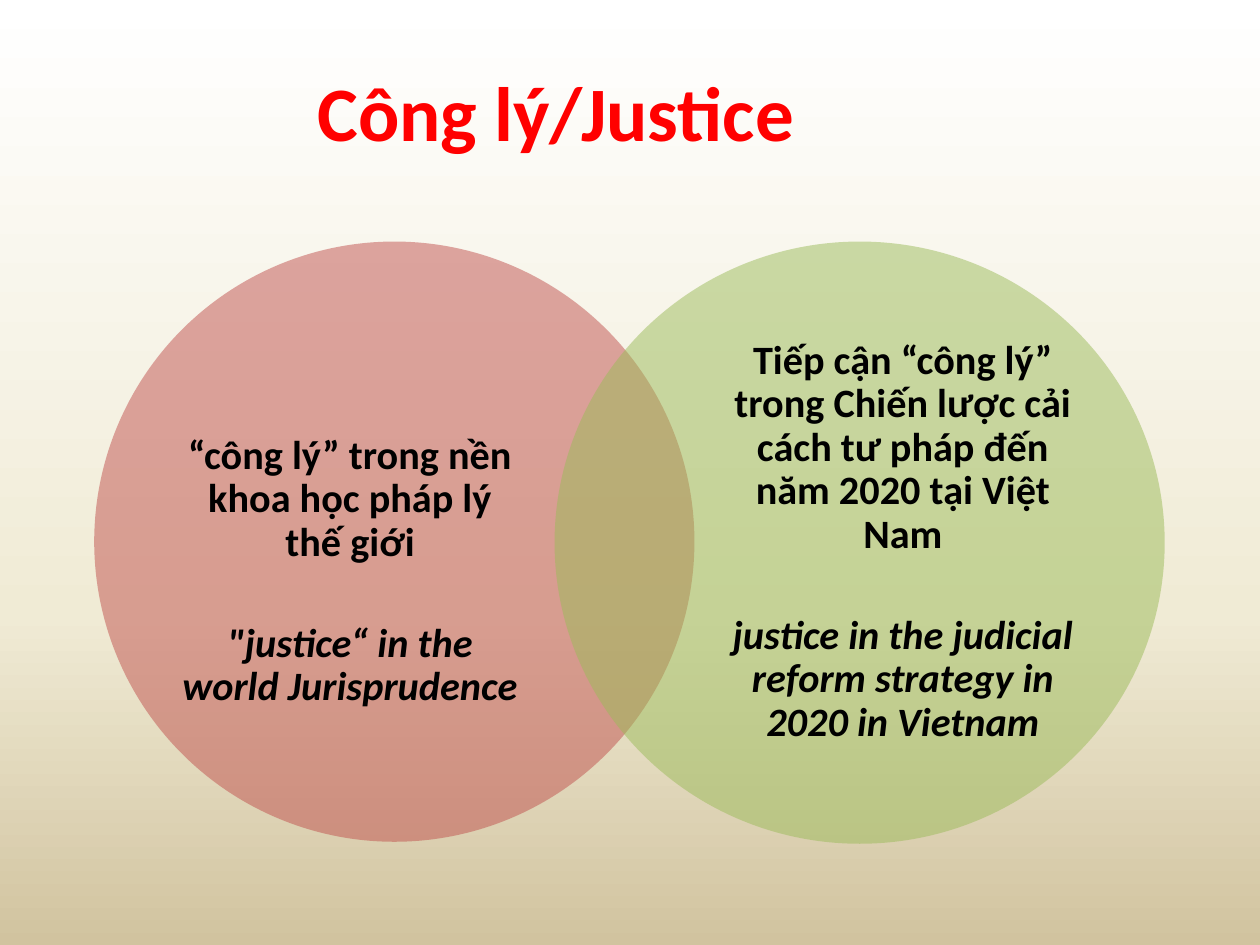
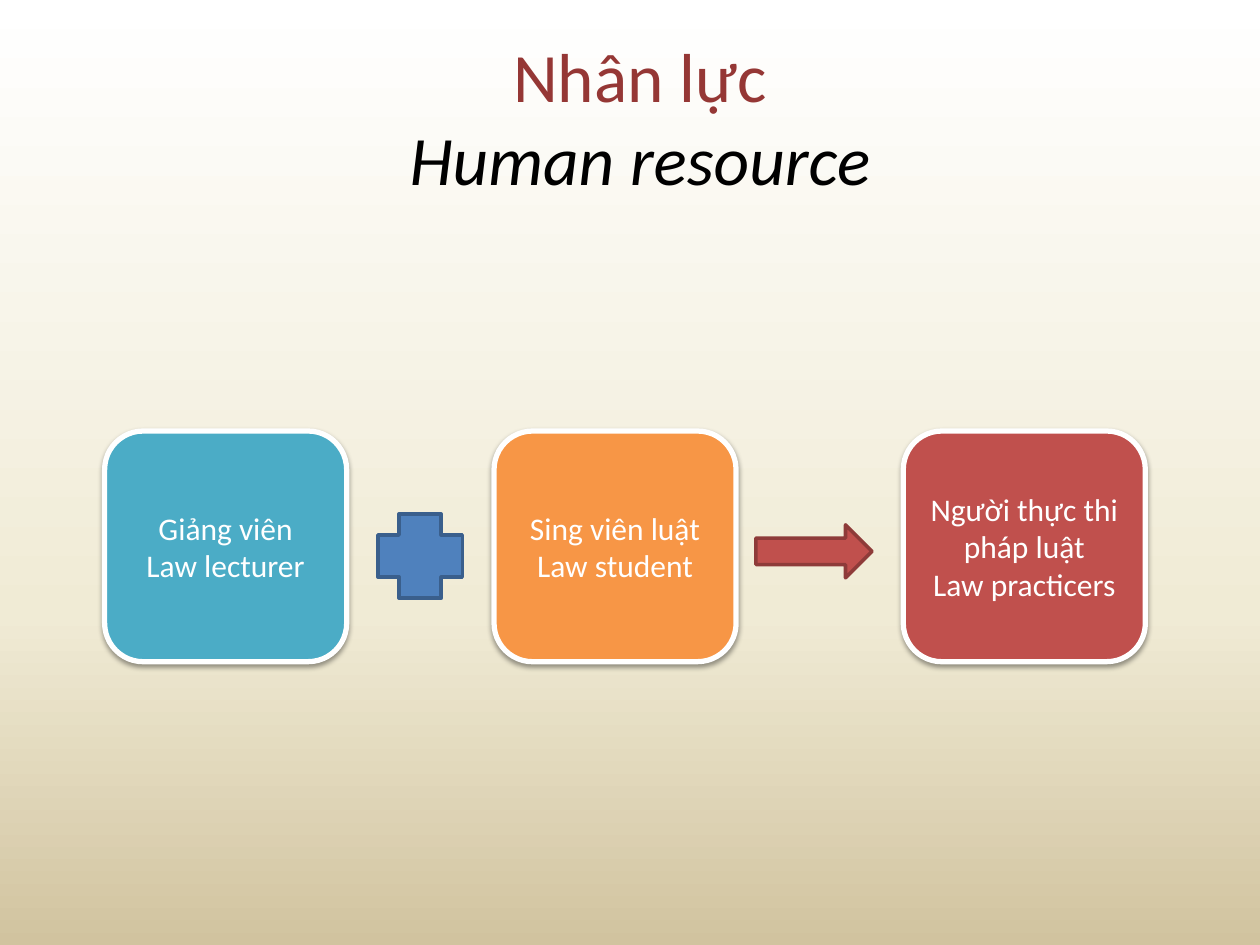
from dataclasses import dataclass

from lxml import etree
from pptx import Presentation
from pptx.dml.color import RGBColor
from pptx.enum.shapes import MSO_SHAPE
from pptx.enum.text import MSO_ANCHOR, PP_ALIGN
from pptx.oxml.ns import qn
from pptx.util import Cm, Pt

OVAL, BOX = MSO_SHAPE.OVAL, MSO_SHAPE.ROUNDED_RECTANGLE
PLUS, ARROW = MSO_SHAPE.CROSS, MSO_SHAPE.RIGHT_ARROW
LEFT, CENTER = PP_ALIGN.LEFT, PP_ALIGN.CENTER
MIDDLE = MSO_ANCHOR.MIDDLE


@dataclass(frozen=True)
class Theme:
    font: str = "Calibri"
    backdrop: tuple = ((0, "FFFFFF"), (65, "F0EBD5"), (100, "D1C39F"))
    bright_red: str = "FF0000"
    dark_red: str = "953735"
    black: str = "000000"
    white: str = "FFFFFF"
    red: str = "C0504D"
    red_edge: str = "8E3B39"
    green: str = "9BBB59"
    teal: str = "4BACC6"
    orange: str = "F79646"
    blue: str = "4F81BD"
    blue_edge: str = "3A5F8C"
    justice_title: float = 44
    resource_title: float = 39.6
    circle_text: float = 23
    step_text: float = 18


T = Theme()

# Content: places are left, top, width, height in cm
JUSTICE_TITLE = "Công lý/Justice"
CIRCLES = [
    dict(place=(1.9, 4.87, 12.1, 12.1), color=T.red,
         text_place=(3.58, 6.3, 6.96, 9.25), drop=1.22,
         lines=("“công lý” trong nền khoa học pháp lý thế giới",
                "\"justice“ in the world Jurisprudence")),
    dict(place=(11.18, 4.87, 12.3, 12.14), color=T.green,
         text_place=(14.66, 6.3, 7.09, 9.27), drop=0,
         lines=("Tiếp cận “công lý” trong Chiến lược cải cách tư pháp đến năm 2020 tại Việt Nam",
                "justice in the judicial reform strategy in 2020 in Vietnam")),
]

RESOURCE_TITLE = ("Nhân lực", "Human resource")
STEP_TOP, STEP_W, STEP_H = 8.69, 4.88, 4.65
STEPS = [
    (2.11, T.teal, ("Giảng viên", "Law lecturer")),
    (9.96, T.orange, ("Sing viên luật", "Law student")),
    (18.21, T.red, ("Người thực thi pháp luật", "Law practicers")),
]
SIGNS = [
    (PLUS, (7.62, 10.36, 1.7, 1.7), T.blue, T.blue_edge),
    (ARROW, (15.24, 10.58, 2.34, 1.07), T.red, T.red_edge),
]


def rgb(code):
    return RGBColor.from_string(code)


def add_color(parent, code, alpha=None):
    clr = etree.SubElement(parent, qn("a:srgbClr"), val=code)
    if alpha is not None:
        etree.SubElement(clr, qn("a:alpha"), val=str(alpha * 1000))


def add_slide(prs):
    """Blank slide on the shared vertical gradient."""
    s = prs.slides.add_slide(prs.slide_layouts[6])
    fill = s.background.fill
    fill.gradient()
    fill.gradient_angle = 270
    stops = s.element.find(".//" + qn("a:gsLst"))
    for stop in list(stops):
        stops.remove(stop)
    for pos, code in T.backdrop:
        add_color(etree.SubElement(stops, qn("a:gs"), pos=str(pos * 1000)), code)
    return s


def write(tf, lines, size, align=CENTER, spacing=None, gap=0):
    """Write paragraphs of (text, color, bold, italic), gap points apart."""
    tf.word_wrap = True
    tf.vertical_anchor = MIDDLE
    for i, (text, color, bold, italic) in enumerate(lines):
        p = tf.paragraphs[0] if i == 0 else tf.add_paragraph()
        p.alignment = align
        if spacing:
            p.line_spacing = spacing
        if i and gap:
            p.space_before = Pt(gap)
        r = p.add_run()
        r.text = text
        r.font.name, r.font.size = T.font, Pt(size)
        r.font.bold, r.font.italic = bold, italic
        r.font.color.rgb = rgb(color)


def add_text(s, place, lines, size, **style):
    tf = s.shapes.add_textbox(*map(Cm, place)).text_frame
    write(tf, lines, size, **style)
    return tf


def add_shape(s, kind, place, color, edge=None, weight=0):
    sp = s.shapes.add_shape(kind, *map(Cm, place))
    sp.shadow.inherit = False
    sp.fill.solid()
    sp.fill.fore_color.rgb = rgb(color)
    if edge:
        sp.line.color.rgb = rgb(edge)
        sp.line.width = Pt(weight)
    else:
        sp.line.fill.background()
    return sp


def add_shadow(sp):
    effects = sp.element.spPr.find(qn("a:effectLst"))
    shadow = etree.SubElement(effects, qn("a:outerShdw"), blurRad=str(Pt(3.1)),
                              dist=str(Pt(1.6)), dir="5400000", rotWithShape="0")
    add_color(shadow, T.black, 38)


def justice_slide(prs):
    s = add_slide(prs)
    add_text(s, (6.15, 0.64, 13.77, 3.18),
             [(JUSTICE_TITLE, T.bright_red, True, False)], T.justice_title, align=LEFT)
    # Overlapping half-transparent circles
    for c in CIRCLES:
        sp = add_shape(s, OVAL, c["place"], c["color"])
        clr = sp.element.spPr.find(qn("a:solidFill"))[0]
        etree.SubElement(clr, qn("a:alpha"), val="50000")
        first, second = c["lines"]
        tf = add_text(s, c["text_place"],
                      [(first, T.black, True, False), (second, T.black, True, True)],
                      T.circle_text, spacing=0.9, gap=33)
        tf.margin_left = tf.margin_right = tf.margin_bottom = 0
        tf.margin_top = Cm(c["drop"])


def resource_slide(prs):
    s = add_slide(prs)
    name, translation = RESOURCE_TITLE
    add_text(s, (1.47, 0.76, 22.86, 3.18),
             [(name, T.dark_red, False, False), (translation, T.black, False, True)],
             T.resource_title)
    # Steps
    for left, color, lines in STEPS:
        sp = add_shape(s, BOX, (left, STEP_TOP, STEP_W, STEP_H), color, T.white, 3)
        add_shadow(sp)
        write(sp.text_frame, [(line, T.white, False, False) for line in lines], T.step_text)
    # Signs between the steps
    for kind, place, color, edge in SIGNS:
        add_shape(s, kind, place, color, edge, 2)


def main():
    prs = Presentation()
    prs.slide_width, prs.slide_height = Cm(25.4), Cm(19.05)
    justice_slide(prs)
    resource_slide(prs)
    prs.save("out.pptx")


if __name__ == "__main__":
    main()
